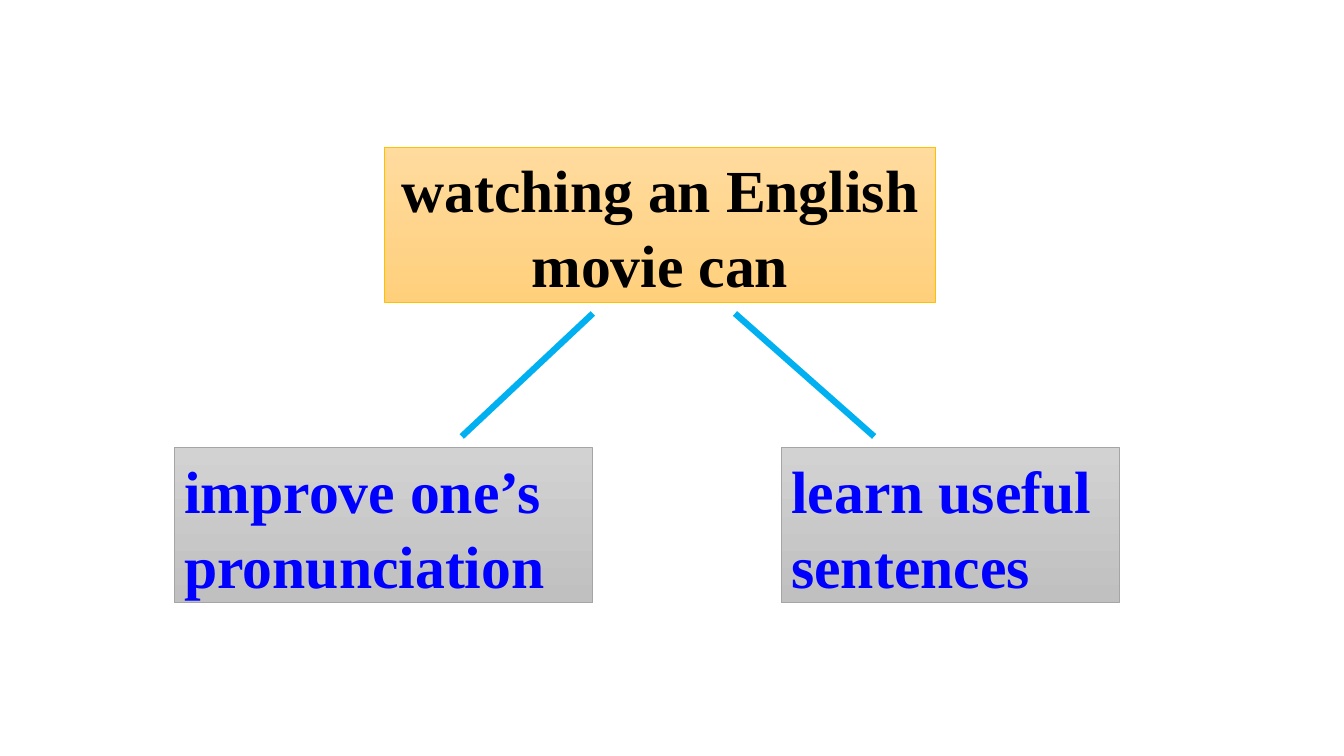
from dataclasses import dataclass

from lxml.etree import SubElement
from pptx import Presentation
from pptx.dml.color import RGBColor
from pptx.enum.shapes import MSO_CONNECTOR, MSO_SHAPE
from pptx.enum.text import MSO_ANCHOR, MSO_AUTO_SIZE, PP_ALIGN
from pptx.oxml.ns import qn
from pptx.util import Inches, Pt


@dataclass(frozen=True)
class Theme:
    font: str = "Times New Roman"
    size: float = 42.6
    line_spacing: float = 1.05
    border_width: float = 0.5
    branch_width: float = 4.5
    branch: str = "00B0F0"
    topic_fill: tuple = ("FFDB9E", "FFD07C")
    topic_border: str = "FFC000"
    topic_text: str = "000000"
    benefit_fill: tuple = ("D2D2D2", "C0C0C0")
    benefit_border: str = "A5A5A5"
    benefit_text: str = "0000FF"


theme = Theme()
BOX_HEIGHT = 1.54
TOPIC_TOP, BENEFIT_TOP = 1.46, 4.44
BRANCH_GAP = 0.11


def style_box(box, words, align, fill, border, text_color):
    box.fill.gradient()
    box.fill.gradient_angle = 270
    for stop, color in zip(box.fill.gradient_stops, fill):
        stop.color.rgb = RGBColor.from_string(color)
    box.line.color.rgb = RGBColor.from_string(border)
    box.line.width = Pt(theme.border_width)
    box.shadow.inherit = False

    frame = box.text_frame
    frame.word_wrap = True
    frame.auto_size = MSO_AUTO_SIZE.NONE
    frame.vertical_anchor = MSO_ANCHOR.MIDDLE
    paragraph = frame.paragraphs[0]
    paragraph.alignment = align
    paragraph.line_spacing = theme.line_spacing
    paragraph.space_before = Pt(0)
    run = paragraph.add_run()
    run.text = words
    run.font.name = theme.font
    run.font.size = Pt(theme.size)
    run.font.bold = True
    run.font.color.rgb = RGBColor.from_string(text_color)


prs = Presentation()
prs.slide_width, prs.slide_height = Inches(13.33), Inches(7.5)
slide = prs.slides.add_slide(prs.slide_layouts[5])

topic = slide.shapes.title
topic.left, topic.top = Inches(3.81), Inches(TOPIC_TOP)
topic.width, topic.height = Inches(5.47), Inches(BOX_HEIGHT)
style_box(topic, "watching an English movie can", PP_ALIGN.CENTER,
          theme.topic_fill, theme.topic_border, theme.topic_text)

# words, box left, box width, branch start x, branch end x
benefits = [
    ("improve one’s pronunciation", 1.73, 4.15, 5.88, 4.58),
    ("learn useful sentences", 7.75, 3.35, 7.29, 8.67),
]
branch_top = TOPIC_TOP + BOX_HEIGHT + BRANCH_GAP
branch_bottom = BENEFIT_TOP - BRANCH_GAP
for words, left, width, start_x, end_x in benefits:
    branch = slide.shapes.add_connector(
        MSO_CONNECTOR.STRAIGHT, Inches(start_x), Inches(branch_top),
        Inches(end_x), Inches(branch_bottom))
    branch.line.color.rgb = RGBColor.from_string(theme.branch)
    branch.line.width = Pt(theme.branch_width)
    SubElement(branch._element.spPr, qn("a:effectLst"))

    benefit = slide.shapes.add_shape(
        MSO_SHAPE.RECTANGLE, Inches(left), Inches(BENEFIT_TOP),
        Inches(width), Inches(BOX_HEIGHT))
    style_box(benefit, words, PP_ALIGN.LEFT, theme.benefit_fill,
              theme.benefit_border, theme.benefit_text)

prs.save("out.pptx")
